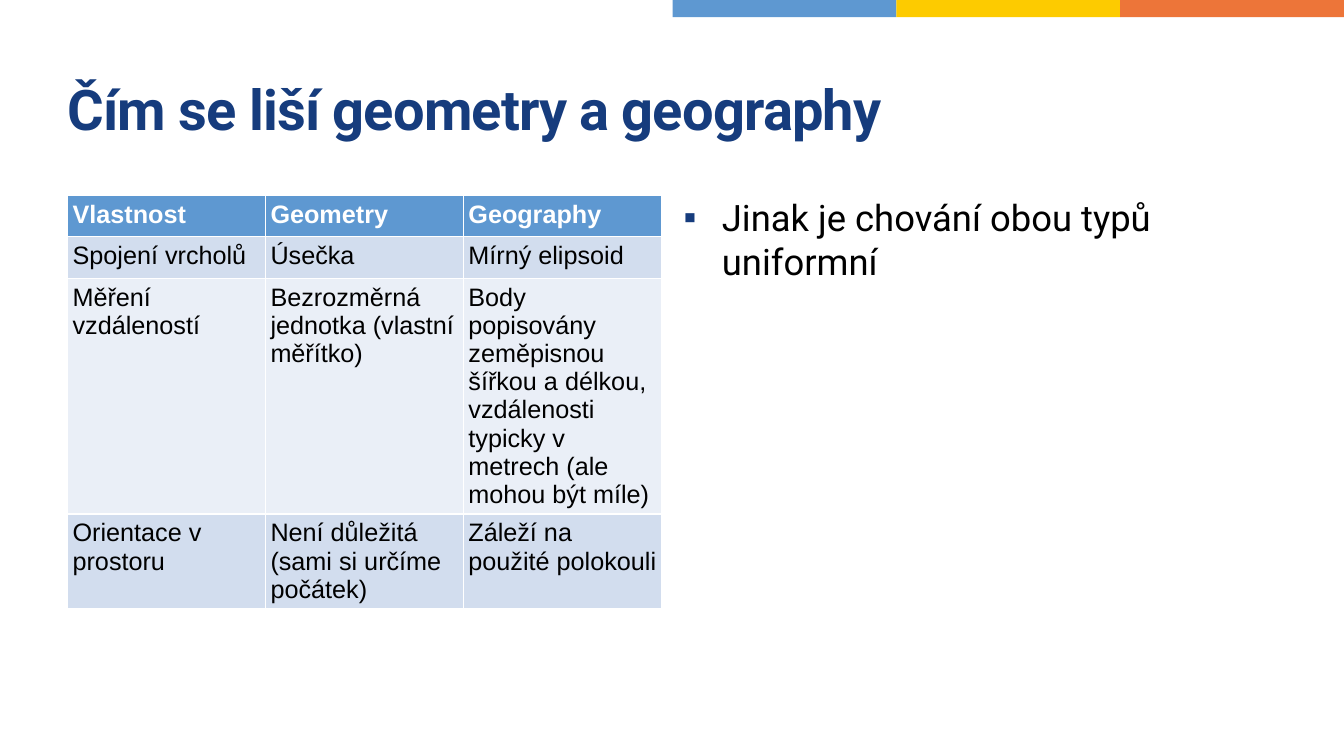
import pptx
import pptx.util
import pptx.dml.color
import pptx.enum.shapes
import pptx.enum.text
import pptx.oxml
import pptx.oxml.ns
from pptx.util import Inches

HUES = {
    "navy": "163C7D", "blue": "5E98D1", "gold": "FDCB00", "rust": "ED7539",
    "white": "FFFFFF", "black": "000000", "mid": "D2DDEE", "pale": "EAEFF7",
}


def tint(name):
    return pptx.dml.color.RGBColor.from_string(HUES[name])


def write(par, text, size, face, hue, bold=False):
    """Add one styled run to a paragraph."""
    run = par.add_run()
    run.text = text
    font = run.font
    font.size = pptx.util.Pt(size)
    font.name = face
    font.bold = bold
    font.color.rgb = tint(hue)
    return run


deck = pptx.Presentation()
deck.slide_width = Inches(13.33)
deck.slide_height = Inches(7.5)
slide = deck.slides.add_slide(deck.slide_layouts[1])

# Colour bar along the right half of the top edge
for i, hue in enumerate(["blue", "gold", "rust"]):
    bar = slide.shapes.add_shape(
        pptx.enum.shapes.MSO_SHAPE.RECTANGLE,
        Inches(6.67 + i * 2.22), 0, Inches(2.22), Inches(0.17))
    bar.shadow.inherit = False
    bar.fill.solid()
    bar.fill.fore_color.rgb = tint(hue)
    bar.line.fill.background()

# Title and body placeholders
title, body = slide.placeholders
places = [
    (title, (0.67, 0.45, 12, 1.25), pptx.enum.text.MSO_ANCHOR.MIDDLE),
    (body, (6.78, 1.94, 5.89, 4.76), pptx.enum.text.MSO_ANCHOR.TOP),
]
for holder, box, anchor in places:
    holder.left, holder.top, holder.width, holder.height = map(Inches, box)
    frame = holder.text_frame
    frame.margin_left = frame.margin_right = 0
    frame.margin_top = frame.margin_bottom = 0
    frame.vertical_anchor = anchor
    frame.word_wrap = True
    frame.auto_size = pptx.enum.text.MSO_AUTO_SIZE.NONE
    frame.paragraphs[0].alignment = pptx.enum.text.PP_ALIGN.LEFT

head = write(title.text_frame.paragraphs[0],
             "Čím se liší geometry a geography", 40, "Roboto", "navy", True)
head.font._element.set("spc", "-60")

point = body.text_frame.paragraphs[0]
point.space_before = pptx.util.Pt(5.2)
write(point, "Jinak je chování obou typů uniformní", 26, "Roboto", "black")
props = point._p.get_or_add_pPr()
props.set("marL", str(Inches(0.38)))
props.set("indent", str(-Inches(0.38)))
space = pptx.oxml.ns.nsdecls("a")
for mark in [
    f'<a:buClr {space}><a:srgbClr val="{HUES["navy"]}"/></a:buClr>',
    f'<a:buFont {space} typeface="Arial"/>',
    f'<a:buChar {space} char="▪"/>',
]:
    props.append(pptx.oxml.parse_xml(mark))

# Comparison table; the default style draws the white borders
rows = [
    ("blue", 0.41, ["Vlastnost", "Geometry", "Geography"]),
    ("mid", 0.41, ["Spojení vrcholů", "Úsečka", "Mírný elipsoid"]),
    ("pale", 2.34, [
        "Měření vzdáleností",
        "Bezrozměrná jednotka (vlastní měřítko)",
        "Body popisovány zeměpisnou šířkou a délkou, vzdálenosti typicky "
        "v metrech (ale mohou být míle)"]),
    ("mid", 0.93, [
        "Orientace v prostoru",
        "Není důležitá (sami si určíme počátek)",
        "Záleží na použité polokouli"]),
]
grid = slide.shapes.add_table(
    len(rows), 3, Inches(0.67), Inches(1.94), Inches(5.89), Inches(4.09)).table
for r, (hue, height, texts) in enumerate(rows):
    grid.rows[r].height = Inches(height)
    for c, text in enumerate(texts):
        cell = grid.cell(r, c)
        cell.margin_left = cell.margin_right = Inches(0.05)
        cell.margin_top = cell.margin_bottom = Inches(0.05)
        cell.fill.solid()
        cell.fill.fore_color.rgb = tint(hue)
        write(cell.text_frame.paragraphs[0], text, 18, "Arial",
              "white" if r == 0 else "black", r == 0)

deck.save("out.pptx")
